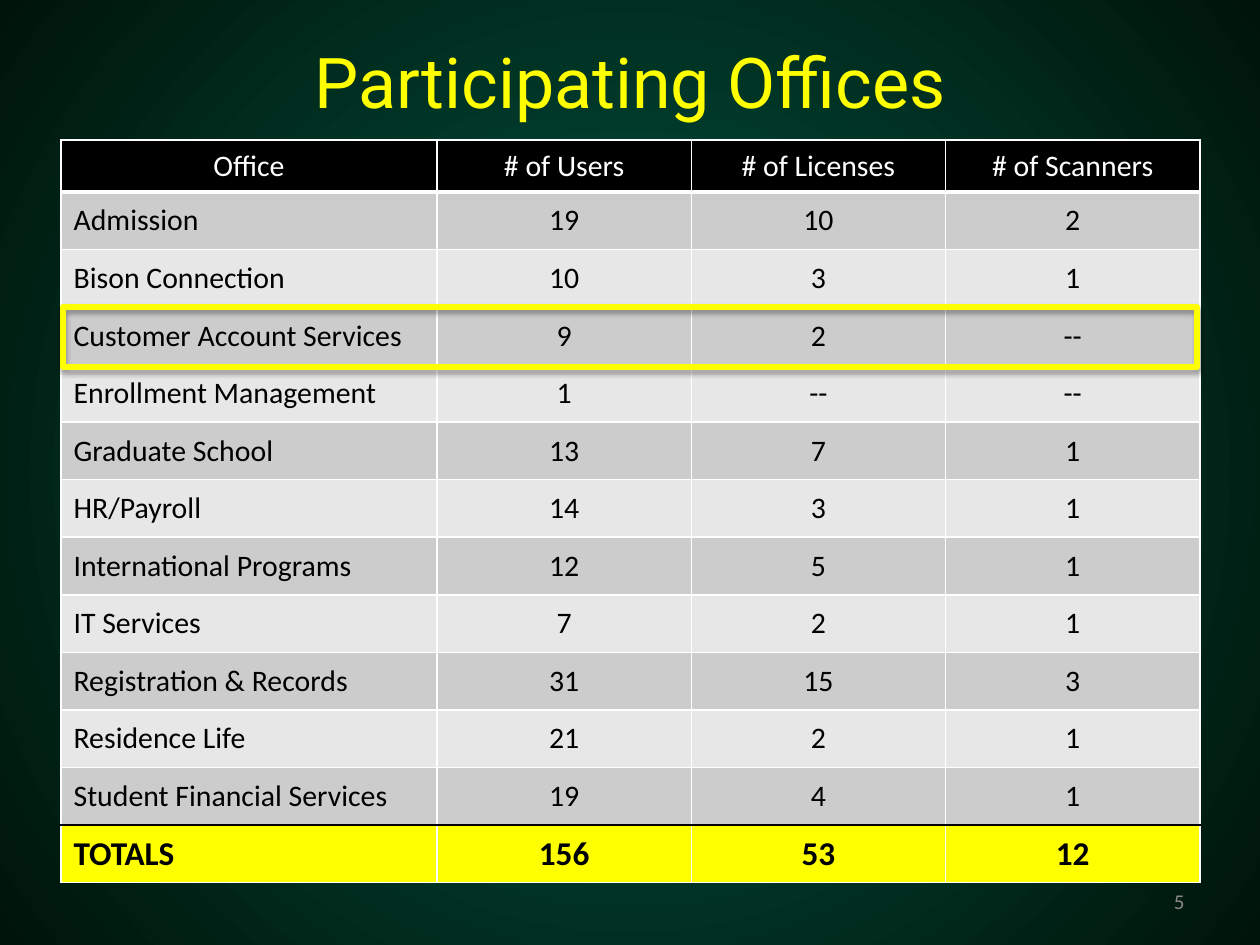
from dataclasses import dataclass

from lxml.etree import SubElement
from pptx import Presentation
from pptx.dml.color import RGBColor
from pptx.enum.shapes import MSO_SHAPE
from pptx.enum.text import MSO_ANCHOR, PP_ALIGN
from pptx.oxml import parse_xml
from pptx.oxml.ns import nsdecls, qn
from pptx.util import Pt

EMU_PER_PX = 914400 // 126


@dataclass(frozen=True)
class Theme:
    title_font: str = "Roboto"
    body_font: str = "Calibri"
    title_size: int = 40
    body_size: int = 17
    totals_size: int = 19
    number_size: int = 12
    accent: str = "FFFF00"
    black: str = "000000"
    white: str = "FFFFFF"
    odd_row: str = "CCCCCC"
    even_row: str = "E7E7E7"
    number: str = "898989"
    glow: str = "005643"
    edge: str = "001409"


THEME = Theme()

OFFICES = [
    ("Office", "# of Users", "# of Licenses", "# of Scanners"),
    ("Admission", "19", "10", "2"),
    ("Bison Connection", "10", "3", "1"),
    ("Customer Account Services", "9", "2", "--"),
    ("Enrollment Management", "1", "--", "--"),
    ("Graduate School", "13", "7", "1"),
    ("HR/Payroll", "14", "3", "1"),
    ("International Programs", "12", "5", "1"),
    ("IT Services", "7", "2", "1"),
    ("Registration & Records", "31", "15", "3"),
    ("Residence Life", "21", "2", "1"),
    ("Student Financial Services", "19", "4", "1"),
    ("TOTALS", "156", "53", "12"),
]


def px(length):
    return length * EMU_PER_PX


def box(left, top, width, height):
    return px(left), px(top), px(width), px(height)


def rgb(value):
    return RGBColor.from_string(value)


def write(frame, text, font_name, size, color, align, bold=False):
    frame.text = text
    paragraph = frame.paragraphs[0]
    paragraph.alignment = align
    font = paragraph.runs[0].font
    font.name, font.size, font.bold = font_name, Pt(size), bold
    font.color.rgb = rgb(color)


def paint_background(slide):
    background = parse_xml(
        f'<p:bg {nsdecls("p", "a")}><p:bgPr><a:gradFill rotWithShape="1"><a:gsLst>'
        f'<a:gs pos="2000"><a:srgbClr val="{THEME.glow}"/></a:gs>'
        f'<a:gs pos="100000"><a:srgbClr val="{THEME.edge}"/></a:gs></a:gsLst>'
        '<a:path path="circle"><a:fillToRect l="50000" t="50000" r="50000" b="50000"/>'
        '</a:path></a:gradFill><a:effectLst/></p:bgPr></p:bg>')
    slide.element.cSld.insert(0, background)


def add_title(slide, text):
    title = slide.shapes.title
    title.left, title.top, title.width, title.height = box(63, 32, 1134, 98)
    title.text_frame.vertical_anchor = MSO_ANCHOR.MIDDLE
    write(title.text_frame, text, THEME.title_font, THEME.title_size,
          THEME.accent, PP_ALIGN.CENTER)


def add_slide_number(slide, number):
    frame = slide.shapes.add_textbox(*box(903, 876, 294, 50)).text_frame
    frame.word_wrap = True
    frame.vertical_anchor = MSO_ANCHOR.MIDDLE
    write(frame, number, THEME.body_font, THEME.number_size,
          THEME.number, PP_ALIGN.RIGHT)


def set_border(cell, side, color, width=1):
    line = SubElement(cell._tc.get_or_add_tcPr(), qn(f"a:ln{side}"), w=str(Pt(width)))
    SubElement(SubElement(line, qn("a:solidFill")), qn("a:srgbClr"), val=color)


def row_style(row, last):
    """Return fill, text colour, size and boldness of a table row."""
    if row == 0:
        return THEME.black, THEME.white, THEME.body_size, False
    if row == last:
        return THEME.accent, THEME.black, THEME.totals_size, True
    band = THEME.odd_row if row % 2 else THEME.even_row
    return band, THEME.black, THEME.body_size, False


def add_office_table(slide, rows):
    last = len(rows) - 1
    header_height, body_height = px(52), px(691) // last
    name_width, count_width = px(376), px(763) // 3
    table = slide.shapes.add_table(
        len(rows), len(rows[0]), *box(61, 140, 1139, 743)).table
    table.horz_banding = False
    for index, column in enumerate(table.columns):
        column.width = count_width if index else name_width

    for row, values in enumerate(rows):
        table.rows[row].height = body_height if row else header_height
        fill, color, size, bold = row_style(row, last)
        for column, value in enumerate(values):
            cell = table.cell(row, column)
            cell.vertical_anchor = MSO_ANCHOR.MIDDLE
            align = PP_ALIGN.CENTER if row == 0 or column else PP_ALIGN.LEFT
            write(cell.text_frame, value, THEME.body_font, size, color, align, bold)
            # A black rule separates the totals from the offices
            set_border(cell, "L", THEME.white)
            set_border(cell, "R", THEME.white)
            set_border(cell, "T", THEME.black if row == last else THEME.white)
            set_border(cell, "B", THEME.black if row == last - 1 else THEME.white,
                       width=1 if row else 3)
            cell.fill.solid()
            cell.fill.fore_color.rgb = rgb(fill)


def add_row_highlight(slide):
    highlight = slide.shapes.add_shape(MSO_SHAPE.RECTANGLE, *box(63, 307, 1134, 60))
    highlight.fill.background()
    highlight.line.color.rgb = rgb(THEME.accent)
    highlight.line.width = Pt(3.5)
    # Soft shadow straight below the frame
    highlight.shadow.inherit = False
    effects = highlight._element.spPr.find(qn("a:effectLst"))
    shadow = SubElement(effects, qn("a:outerShdw"), blurRad=str(Pt(3.1)),
                        dist=str(Pt(1.8)), dir="5400000", rotWithShape="0")
    shade = SubElement(shadow, qn("a:srgbClr"), val=THEME.black)
    SubElement(shade, qn("a:alpha"), val="35000")


def main():
    presentation = Presentation()
    presentation.slide_width, presentation.slide_height = px(1260), px(945)
    slide = presentation.slides.add_slide(presentation.slide_layouts[5])
    paint_background(slide)
    add_title(slide, "Participating Offices")
    add_slide_number(slide, "5")
    add_office_table(slide, OFFICES)
    add_row_highlight(slide)
    presentation.save("out.pptx")


if __name__ == "__main__":
    main()
